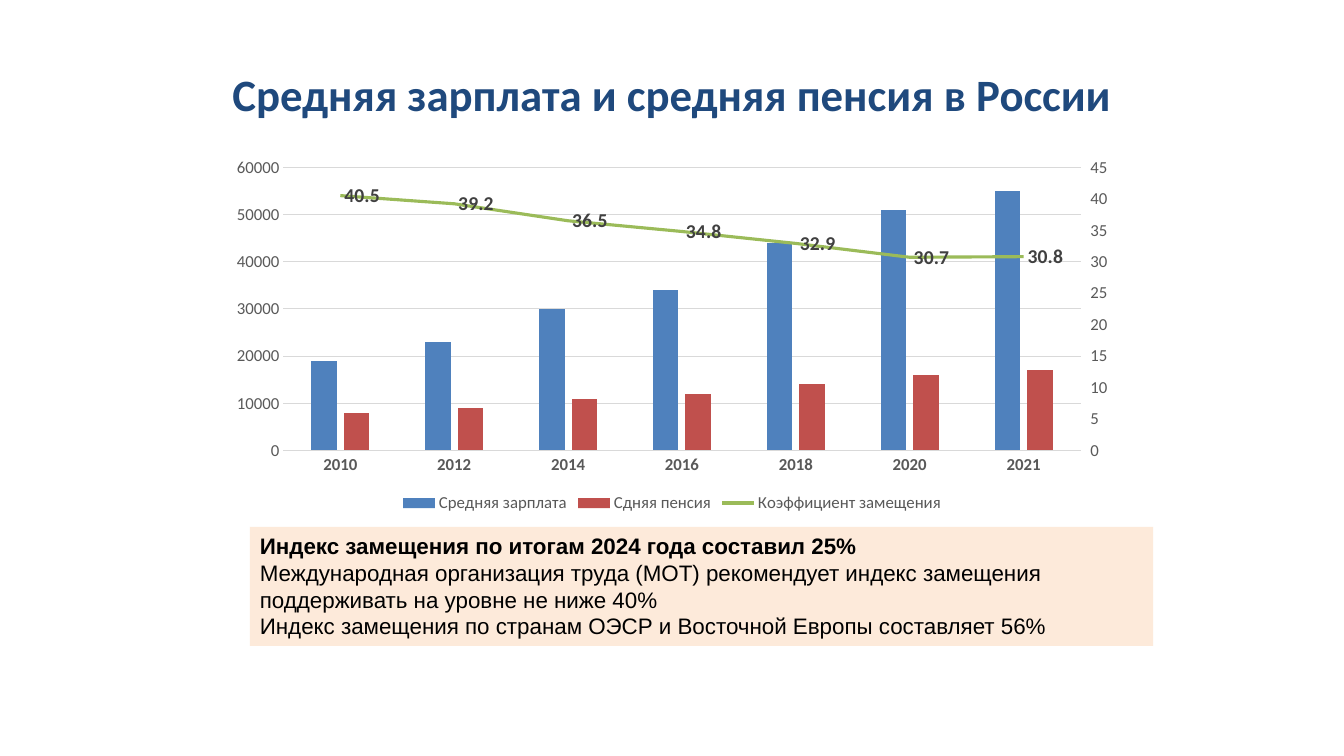
from copy import deepcopy

from lxml import etree
from pptx import Presentation, util as u
from pptx.chart import data
from pptx.dml.color import RGBColor
from pptx.enum import chart as ch, shapes, text
from pptx.oxml.ns import qn

TITLE = "Средняя зарплата и средняя пенсия в России"
YEARS = ["2010", "2012", "2014", "2016", "2018", "2020", "2021"]
BARS = [
    ("Средняя зарплата", "blue", [19000, 23000, 30000, 34000, 44000, 51000, 55000]),
    ("Сдняя пенсия", "red", [8000, 9000, 11000, 12000, 14000, 16000, 17000]),
]
RATIO = ("Коэффициент замещения", "green", [40.5, 39.2, 36.5, 34.8, 32.9, 30.7, 30.8])
NOTES = [
    "Индекс замещения по итогам 2024 года составил 25%",
    "Международная организация труда (МОТ) рекомендует индекс замещения "
    "поддерживать на уровне не ниже 40%",
    "Индекс замещения по странам ОЭСР и Восточной Европы составляет 56%",
]
COLORS = {
    "navy": "1F497D", "blue": "4F81BD", "red": "C0504D", "green": "9BBB59",
    "grey": "595959", "dark": "404040", "grid": "D9D9D9", "peach": "FDEADA",
    "black": "000000",
}
BOXES = {
    "title": (1.7, 0.76, 30.48, 3.18),
    "chart": (5.51, 3.78, 22.86, 9.25),
    "notes": (6.3, 13.28, 22.76, 3.0),
}


def color(name):
    return RGBColor.from_string(COLORS[name])


def place(name):
    return [u.Cm(n) for n in BOXES[name]]


def style(font, size, tint, bold=False, face="Calibri"):
    font.size, font.bold, font.name = u.Pt(size), bold, face
    font.color.rgb = color(tint)


def stroke(line, tint, width):
    line.color.rgb = color(tint)
    line.width = u.Pt(width)


def add_right(chart):
    """Move the last series to a line plot on a second value axis."""
    area = chart.plots[0]._element.getparent()
    bars = area.find(qn("c:barChart"))
    ser = bars.findall(qn("c:ser"))[-1]
    flag = ser.find(qn("c:invertIfNegative"))
    if flag is not None:
        ser.remove(flag)

    line = etree.Element(qn("c:lineChart"))
    etree.SubElement(line, qn("c:grouping")).set("val", "standard")
    etree.SubElement(line, qn("c:varyColors")).set("val", "0")
    line.append(ser)
    etree.SubElement(line, qn("c:marker")).set("val", "1")
    bars.addnext(line)

    cat, val = (deepcopy(area.find(qn(tag))) for tag in ("c:catAx", "c:valAx"))
    for axis, key, other in ((cat, "5001", "5002"), (val, "5002", "5001")):
        etree.SubElement(line, qn("c:axId")).set("val", key)
        axis.find(qn("c:axId")).set("val", key)
        axis.find(qn("c:crossAx")).set("val", other)
    cat.find(qn("c:delete")).set("val", "1")
    val.remove(val.find(qn("c:majorGridlines")))
    val.find(qn("c:axPos")).set("val", "r")
    val.find(qn("c:crosses")).set("val", "max")
    val.find(qn("c:majorTickMark")).set("val", "out")
    val.find(qn("c:scaling")).find(qn("c:max")).set("val", "45")
    val.find(qn("c:majorUnit")).set("val", "5")
    last = area.find(qn("c:valAx"))
    last.addnext(val)
    last.addnext(cat)


def add_chart(slide):
    table = data.CategoryChartData()
    table.categories = YEARS
    for name, _, vals in [*BARS, RATIO]:
        table.add_series(name, vals)
    kind = ch.XL_CHART_TYPE.COLUMN_CLUSTERED
    chart = slide.shapes.add_chart(kind, *place("chart"), table).chart
    style(chart.font, 10, "black")
    chart.has_title = False
    chart.has_legend = True
    chart.legend.position = ch.XL_LEGEND_POSITION.BOTTOM
    chart.legend.include_in_layout = False
    style(chart.legend.font, 12, "grey")

    cat, val = chart.category_axis, chart.value_axis
    for axis in (cat, val):
        axis.major_tick_mark = axis.minor_tick_mark = ch.XL_TICK_MARK.NONE
        style(axis.tick_labels.font, 12, "grey", axis is cat)
    stroke(cat.format.line, "grid", 0.75)
    val.format.line.fill.background()
    val.has_major_gridlines = True
    stroke(val.major_gridlines.format.line, "grid", 0.75)
    val.minimum_scale, val.maximum_scale, val.major_unit = 0, 60000, 10000
    val.tick_labels.number_format = "General"
    val.tick_labels.number_format_is_linked = False

    add_right(chart)
    bars, line = chart.plots
    bars.gap_width, bars.overlap, bars.vary_by_categories = 219, -27, False
    for ser, (_, tint, _) in zip(bars.series, BARS):
        ser.format.fill.solid()
        ser.format.fill.fore_color.rgb = color(tint)

    ratio = line.series[0]
    stroke(ratio.format.line, RATIO[1], 2.25)
    ratio.marker.style = ch.XL_MARKER_STYLE.NONE
    ratio.smooth = False
    tags = ratio.data_labels
    tags.show_value = True
    tags.position = ch.XL_LABEL_POSITION.RIGHT
    style(tags.font, 14, "dark", True)


def add_title(slide):
    frame = slide.shapes.add_textbox(*place("title")).text_frame
    frame.word_wrap = True
    frame.vertical_anchor = text.MSO_ANCHOR.MIDDLE
    frame.text = TITLE
    para = frame.paragraphs[0]
    para.alignment = text.PP_ALIGN.CENTER
    style(para.runs[0].font, 32, "navy", True)


def add_notes(slide):
    box = slide.shapes.add_shape(shapes.MSO_SHAPE.RECTANGLE, *place("notes"))
    box.shadow.inherit = False
    box.fill.solid()
    box.fill.fore_color.rgb = color("peach")
    box.line.fill.background()
    frame = box.text_frame
    frame.word_wrap = True
    frame.auto_size = text.MSO_AUTO_SIZE.SHAPE_TO_FIT_TEXT
    frame.vertical_anchor = text.MSO_ANCHOR.TOP
    frame.text = "\n".join(NOTES)
    for i, para in enumerate(frame.paragraphs):
        para.alignment = text.PP_ALIGN.LEFT
        style(para.runs[0].font, 16, "black", i == 0, "Arial")


def main():
    deck = Presentation()
    deck.slide_width, deck.slide_height = u.Cm(33.87), u.Cm(19.05)
    slide = deck.slides.add_slide(deck.slide_layouts[6])
    add_title(slide)
    add_chart(slide)
    add_notes(slide)
    deck.save("out.pptx")


if __name__ == "__main__":
    main()
